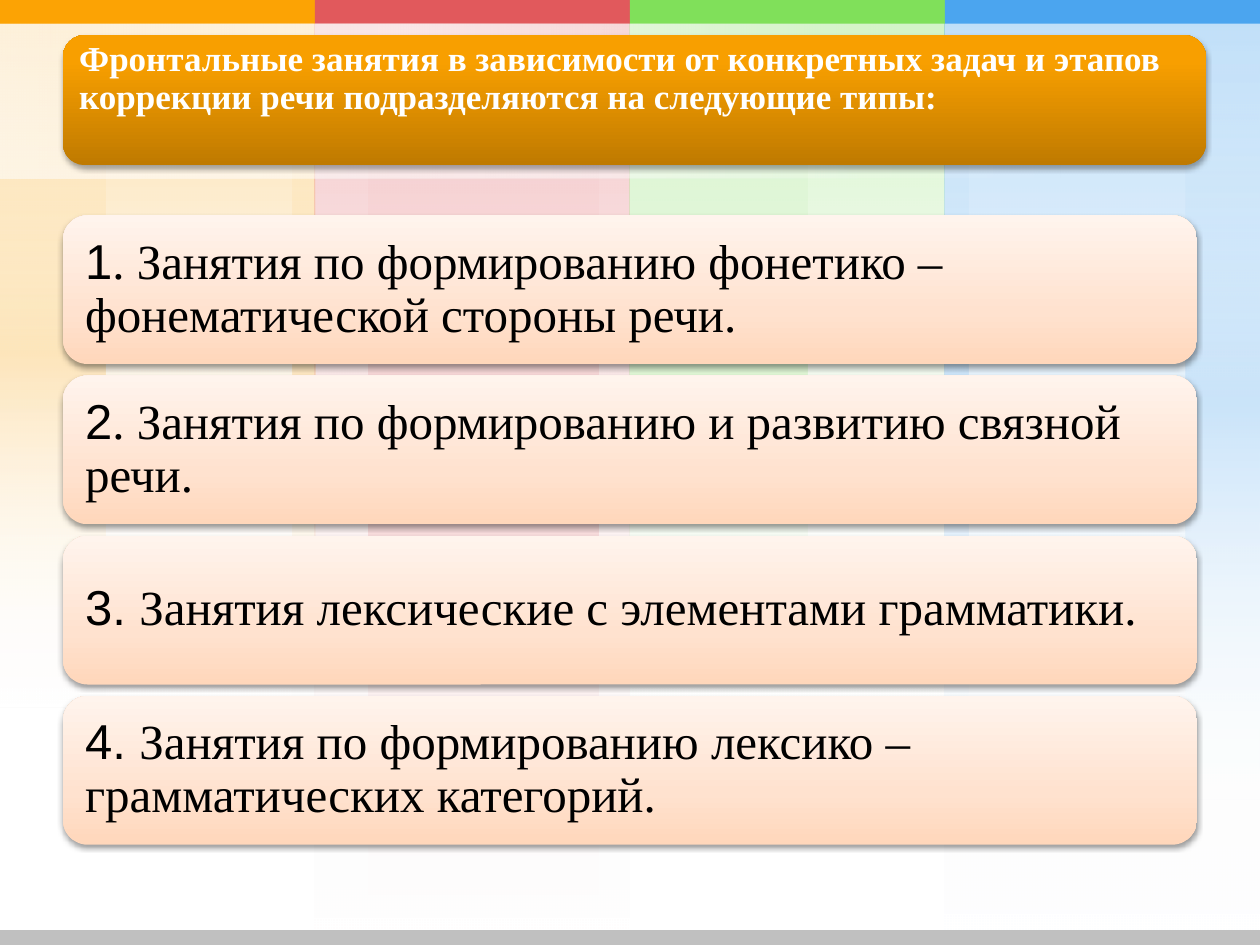
import lxml.etree
import pptx
import pptx.dml.color
import pptx.enum.shapes
import pptx.enum.text
import pptx.oxml.ns
import pptx.util

Cm = pptx.util.Cm
Pt = pptx.util.Pt
qn = pptx.oxml.ns.qn

COLORS = {
    "orange": "FCA304", "red": "E1595C", "green": "80E05A", "blue": "4BA5EF",
    "white": "FFFFFF", "black": "000000", "footer": "C0C0C0",
    "title_dark": "BF7A00", "title_mid": "F89F00", "title_light": "F9A000",
    "card_dark": "FFD7BB", "card_mid": "FFE2CF", "card_light": "FFF4ED",
}
TITLE_STOPS = [(0, "title_dark", 100), (80, "title_mid", 100), (100, "title_light", 100)]
CARD_STOPS = [(0, "card_dark", 100), (35, "card_mid", 100), (100, "card_light", 100)]
DOWN, UP = 270, 90

SLIDE_W, SLIDE_H = 25.4, 19.05
COLUMN_W, STRIP_H = SLIDE_W / 4, 0.48
MARGIN, CARD_TOP, CARD_H, CARD_PITCH = 1.27, 4.34, 3.0, 3.23

TITLE = ("Фронтальные занятия в зависимости от конкретных задач и этапов "
         "коррекции речи подразделяются на следующие типы:")
LESSON_TYPES = [
    ("1", ". Занятия по формированию фонетико – фонематической стороны речи."),
    ("2", ". Занятия по формированию и развитию связной речи."),
    ("3. ", "Занятия лексические с элементами грамматики."),
    ("4. ", "Занятия по формированию лексико – грамматических категорий."),
]


def fade(color, opacity):
    return [(0, color, opacity), (100, "white", 0)]


def glow(color, opacity):
    return [(0, "white", 0), (50, color, opacity), (100, "white", 0)]


class SlideBuilder:
    """Holds the style and the current slide and draws each kind of element."""

    def __init__(self, presentation):
        self.slide = presentation.slides.add_slide(presentation.slide_layouts[6])
        self.number_font = "Arial"
        self.text_font = "Times New Roman"
        self.line_spacing = 0.9

    def shape(self, box, rounded=False):
        kinds = pptx.enum.shapes.MSO_SHAPE
        kind = kinds.ROUNDED_RECTANGLE if rounded else kinds.RECTANGLE
        shape = self.slide.shapes.add_shape(kind, *(Cm(length) for length in box))
        shape.shadow.inherit = False
        shape.line.fill.background()
        return shape

    def solid(self, box, color):
        shape = self.shape(box)
        shape.fill.solid()
        shape.fill.fore_color.rgb = pptx.dml.color.RGBColor.from_string(COLORS[color])

    def gradient(self, box, stops, angle=DOWN, rotation=0, rounded=False):
        shape = self.shape(box, rounded)
        shape.rotation = rotation
        shape.fill.gradient()
        shape.fill.gradient_angle = angle
        stop_list = shape._element.spPr.find(".//" + qn("a:gsLst"))
        for stop in list(stop_list):
            stop_list.remove(stop)
        for position, color, opacity in stops:
            stop = lxml.etree.SubElement(stop_list, qn("a:gs"), pos=str(position * 1000))
            self.tint(stop, color, opacity)
        return shape

    def tint(self, parent, color, opacity):
        tint = lxml.etree.SubElement(parent, qn("a:srgbClr"), val=COLORS[color])
        if opacity < 100:
            lxml.etree.SubElement(tint, qn("a:alpha"), val=str(opacity * 1000))

    def panel(self, box, stops, shadow_opacity, shadow_distance):
        panel = self.gradient(box, stops, UP, rounded=True)
        shadow = lxml.etree.SubElement(
            panel._element.spPr.find(qn("a:effectLst")), qn("a:outerShdw"),
            blurRad=str(Pt(3.1)), dist=str(Pt(shadow_distance)),
            dir="5400000", rotWithShape="0")
        self.tint(shadow, "black", shadow_opacity)
        return panel

    def label(self, panel, runs, size, color, inset, bold=False):
        frame = panel.text_frame
        frame.word_wrap = True
        frame.vertical_anchor = pptx.enum.text.MSO_ANCHOR.MIDDLE
        frame.margin_left = frame.margin_right = Cm(inset)
        frame.margin_top = frame.margin_bottom = Cm(inset)
        paragraph = frame.paragraphs[0]
        paragraph.alignment = pptx.enum.text.PP_ALIGN.LEFT
        paragraph.line_spacing = self.line_spacing
        for text, font_name in runs:
            run = paragraph.add_run()
            run.text = text
            run.font.name = font_name
            run.font.size = Pt(size)
            run.font.bold = bold
            run.font.color.rgb = pptx.dml.color.RGBColor.from_string(COLORS[color])

    def title(self, text):
        panel = self.panel((MARGIN, 0.71, 23.04, 2.62), TITLE_STOPS, 35, 1.8)
        self.label(panel, [(text, self.text_font)], 20, "white", 0.2, bold=True)
        panel.text_frame.vertical_anchor = pptx.enum.text.MSO_ANCHOR.TOP
        panel.text_frame.margin_top = Cm(0)

    def card(self, index, number, text):
        top = CARD_TOP + index * CARD_PITCH
        panel = self.panel((MARGIN, top, SLIDE_W - 2 * MARGIN, CARD_H), CARD_STOPS, 38, 1.6)
        runs = [(number, self.number_font), (text, self.text_font)]
        self.label(panel, runs, 28, "black", 0.3)

    def column(self, color, left, height, glows):
        box = (left, 0, COLUMN_W, height)
        self.gradient(box, fade(color, 20))
        for offset, width, glow_height in glows:
            self.gradient((left + offset, 0, width, glow_height), glow(color, 20))
        self.gradient(box, fade(color, 20))


def main():
    presentation = pptx.Presentation()
    presentation.slide_width, presentation.slide_height = Cm(SLIDE_W), Cm(SLIDE_H)
    builder = SlideBuilder(presentation)

    columns = [
        ("orange", 14.27, [(5.89, 0.46, 14.27), (0, 2.13, 14.27)]),
        ("red", SLIDE_H, [(1.07, 4.65, SLIDE_H)]),
        ("green", 14.27, [(0, 3.58, 14.27)]),
        ("blue", 18.97, [(0, 0.48, 16.18), (4.85, 1.5, 16.18)]),
    ]
    for index, (color, height, glows) in enumerate(columns):
        builder.column(color, index * COLUMN_W, height, glows)
    for index, (color, _, _) in enumerate(columns):
        builder.solid((index * COLUMN_W, 0, COLUMN_W, STRIP_H), color)

    title_haze = ((8, -7.49, 3.1, 19.08), fade("white", 35))
    hazes = [
        ((10.57, -7.24, 0.25, 21.39), glow("white", 35)),
        title_haze,
        ((7.77, -7.29, 0.74, 16.28), glow("white", 35)),
        title_haze,
    ]
    for box, stops in hazes:
        builder.gradient(box, stops, rotation=270)
    builder.solid((0, 18.75, SLIDE_W, 0.3), "footer")

    builder.title(TITLE)
    for index, (number, text) in enumerate(LESSON_TYPES):
        builder.card(index, number, text)
    presentation.save("out.pptx")


if __name__ == "__main__":
    main()
